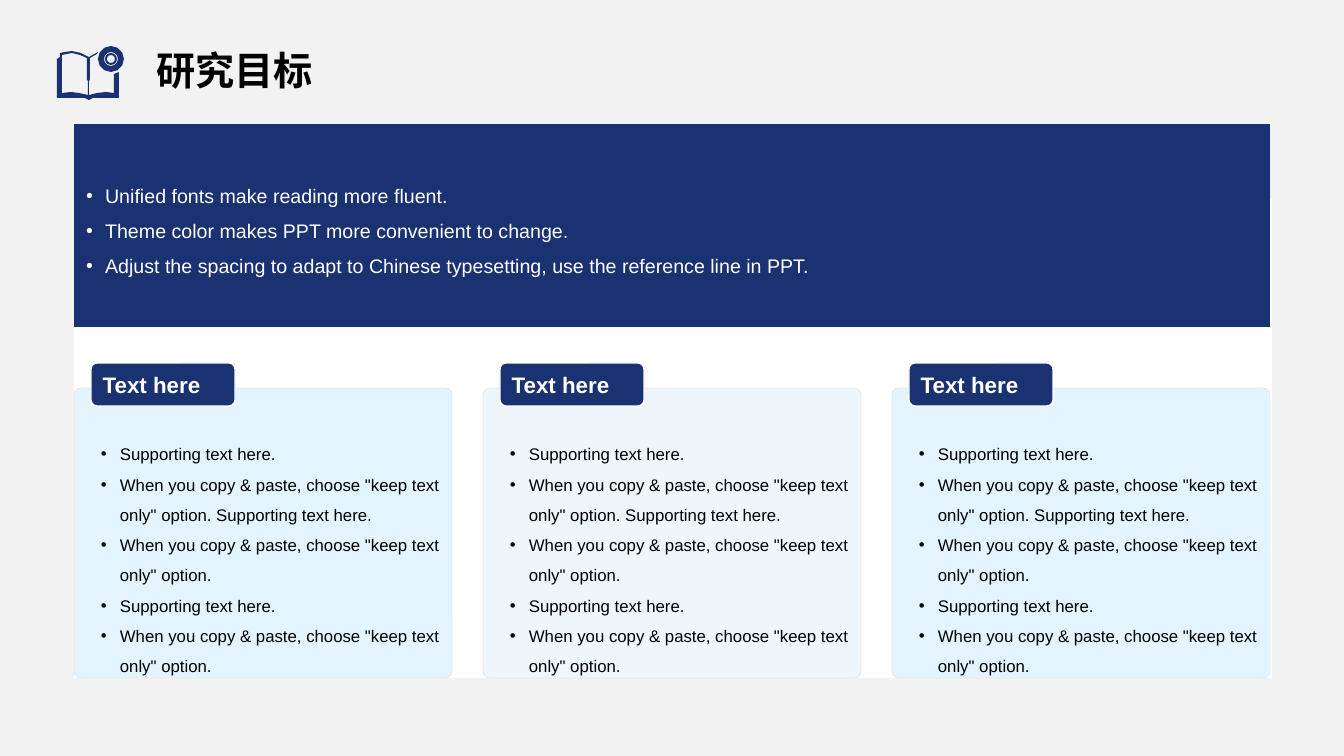
from math import cos, pi, sin
from lxml.etree import SubElement
from pptx import Presentation
from pptx.dml.color import RGBColor
from pptx.enum.shapes import MSO_SHAPE
from pptx.enum.text import MSO_ANCHOR, MSO_AUTO_SIZE, PP_ALIGN
from pptx.oxml.ns import qn
from pptx.util import Emu, Pt

NAVY, WHITE, BLACK, GREY = "1A3172", "FFFFFF", "000000", "D9D9D9"
TITLE = "研究目标"
GOALS = [
    "Unified fonts make reading more fluent.",
    "Theme color makes PPT more convenient to change.",
    "Adjust the spacing to adapt to Chinese typesetting, use the reference line in PPT.",
]
DETAILS = [
    "Supporting text here.",
    'When you copy & paste, choose "keep text only" option. Supporting text here.',
    'When you copy & paste, choose "keep text only" option.',
    "Supporting text here.",
    'When you copy & paste, choose "keep text only" option.',
]
CARDS = [("Text here", DETAILS, "BAE5FF"),
         ("Text here", DETAILS, "D6E9F5"),
         ("Text here", DETAILS, "BAE5FF")]
BOOK = [(72, 51), (81, 53), (89, 57), (98, 52), (97, 54), (90, 58), (90, 81),
        (89, 79), (89, 95), (97, 93), (106, 92), (114, 93), (114, 74), (119, 72),
        (119, 98), (93, 98), (89, 100), (85, 98), (57, 98), (57, 59), (60, 57),
        (60, 53), (65, 52)]
PAGE = [(72, 53), (62, 55), (62, 93), (71, 92), (79, 93), (88, 95),
        (88, 79), (87, 81), (87, 58), (80, 55)]
DISC_CENTRE, DISC_RADII = (111, 59), (13, 7, 6, 4)
CARD_STEP = 409


def px(n):
    return Emu(round(n * 914400 / 100.8))


def rgb(color):
    return RGBColor.from_string(color)


def circle(cx, cy, radius, steps=12):
    angles = [2 * pi * i / steps for i in range(steps)]
    return [(cx + radius * cos(a), cy + radius * sin(a)) for a in angles]


def place(sp, left, top, width, height):
    sp.left, sp.top, sp.width, sp.height = map(px, (left, top, width, height))


def paint(sp, fill, line=None, weight=1.0, alpha=None):
    sp.shadow.inherit = False
    sp.fill.solid()
    sp.fill.fore_color.rgb = rgb(fill)
    if alpha:
        color = sp._element.spPr.find(qn("a:solidFill"))[0]
        SubElement(color, qn("a:alpha"), val=str(alpha * 1000))
    if line:
        sp.line.color.rgb = rgb(line)
        sp.line.width = Pt(weight)
    else:
        sp.line.fill.background()


def add_box(s, box, fill, radius=None, **style):
    kind = MSO_SHAPE.RECTANGLE if radius is None else MSO_SHAPE.ROUNDED_RECTANGLE
    sp = s.shapes.add_shape(kind, *map(px, box))
    if radius is not None:
        sp.adjustments[0] = radius
    paint(sp, fill, **style)
    return sp


def write(sp, lines, size, color, bold=False, spacing=1.0,
          anchor=MSO_ANCHOR.TOP, bullet=False, wrap=True):
    tf = sp.text_frame
    tf.word_wrap, tf.auto_size, tf.vertical_anchor = wrap, MSO_AUTO_SIZE.NONE, anchor
    for i, line in enumerate(lines):
        p = tf.add_paragraph() if i else tf.paragraphs[0]
        p.alignment, p.line_spacing = PP_ALIGN.LEFT, spacing
        p.space_before = p.space_after = Pt(0)
        if bullet:
            pPr = p._p.get_or_add_pPr()
            pPr.set("marL", str(px(19)))
            pPr.set("indent", str(px(-19)))
            SubElement(pPr, qn("a:buFont"), typeface="Arial")
            SubElement(pPr, qn("a:buChar"), char="•")
        r = p.add_run()
        r.text = line
        r.font.name, r.font.size, r.font.bold = "Arial", Pt(size), bold
        r.font.color.rgb = rgb(color)


def add_icon(s):
    outlines = [BOOK, PAGE] + [circle(*DISC_CENTRE, radius) for radius in DISC_RADII]
    paths = [[(px(x), px(y)) for x, y in outline] for outline in outlines]
    builder = s.shapes.build_freeform(*paths[0][0])
    for i, points in enumerate(paths):
        if i:
            builder.move_to(*points[0])
        builder.add_line_segments(points[1:], close=True)
    paint(builder.convert_to_shape(), NAVY)


def add_card(s, left, heading, details, fill):
    add_box(s, (left, 388, 378, 290), fill, 0.024, line=GREY, weight=0.25, alpha=40)
    tag = add_box(s, (left + 17, 363, 144, 43), NAVY, 0.14, line=WHITE)
    write(tag, [heading], 16, WHITE, bold=True, anchor=MSO_ANCHOR.MIDDLE, wrap=False)
    body = s.shapes.add_textbox(*map(px, (left + 17, 429, 362, 248)))
    write(body, details, 12, BLACK, spacing=1.5, bullet=True)


def main():
    """Build the research goals slide."""
    prs = Presentation()
    prs.slide_width, prs.slide_height = px(1344), px(756)
    s = prs.slides.add_slide(prs.slide_layouts[1])
    s.background.fill.solid()
    s.background.fill.fore_color.rgb = rgb("F2F2F2")
    title, goals = s.placeholders
    add_icon(s)
    add_box(s, (74, 199, 1198, 479), WHITE)
    add_box(s, (74, 124, 1196, 203), NAVY)
    s.shapes._spTree.append(goals._element)
    place(goals, 76, 151, 1194, 148)
    write(goals, GOALS, 14, WHITE, spacing=1.5, anchor=MSO_ANCHOR.MIDDLE, bullet=True)
    for i, card in enumerate(CARDS):
        add_card(s, 74 + i * CARD_STEP, *card)
    s.shapes._spTree.append(title._element)
    place(title, 146, 25, 1197, 74)
    write(title, [TITLE], 28, BLACK, bold=True, spacing=0.9, anchor=MSO_ANCHOR.BOTTOM)
    prs.save("out.pptx")


if __name__ == "__main__":
    main()
